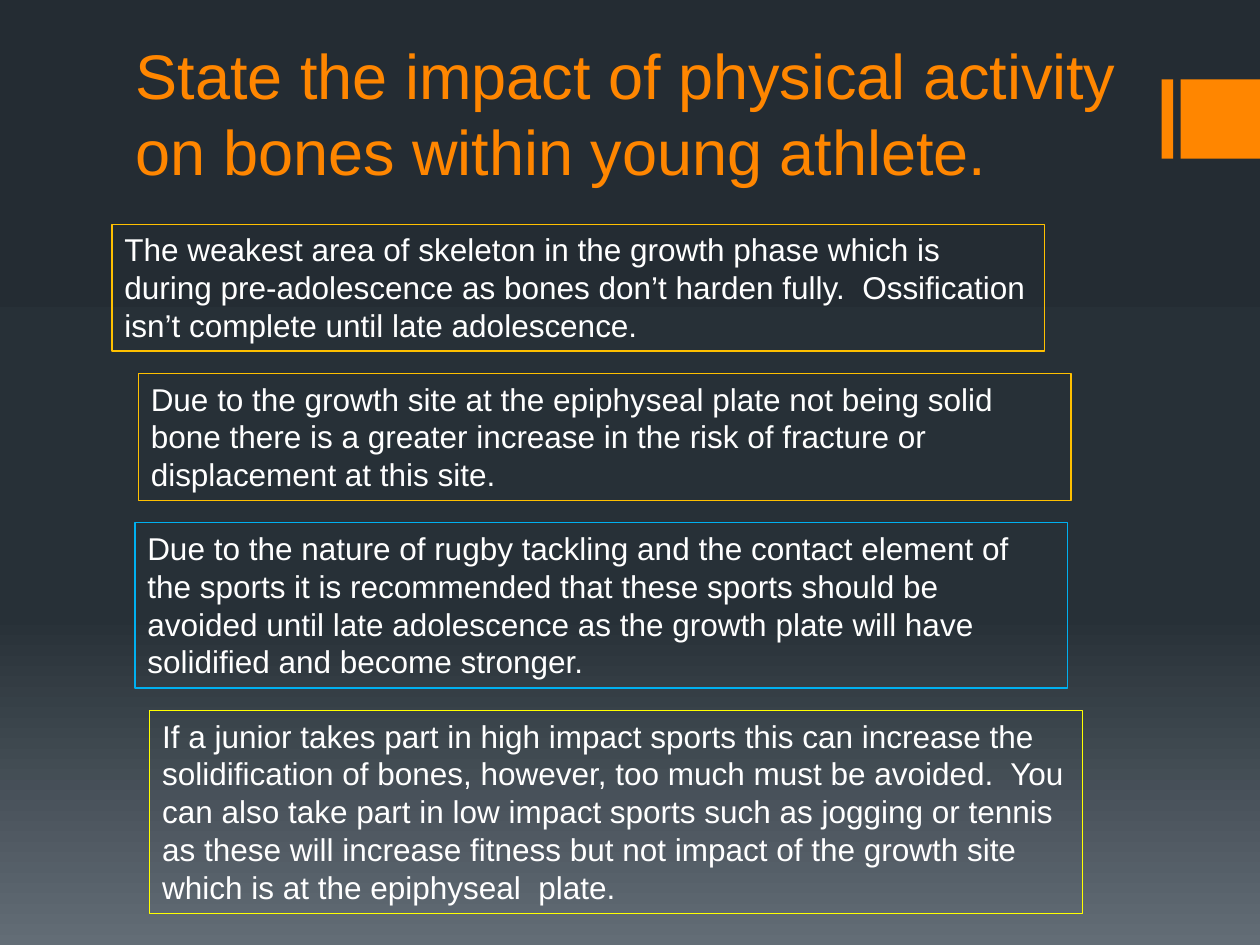
"""Build a slide on how physical activity affects the bones of young athletes."""
import copy
from dataclasses import dataclass

import pptx
import pptx.dml.color
import pptx.enum.shapes
import pptx.enum.text
import pptx.oxml.ns
import pptx.shapes.autoshape
import pptx.slide
import pptx.text.text
import pptx.util

Cm = pptx.util.Cm
FONT = "Arial"
ORANGE = "FF8600"
WHITE = "FFFFFF"
BACKGROUND_STOPS = [(0, "242C33"), (0.65, "273037"), (1, "636D76")]
TITLE = "State the impact of physical activity on bones within young athlete."
ACCENT_TOP, ACCENT_HEIGHT = 1.6, 1.6
ACCENT_BARS = [(23.42, 0.23), (23.8, 1.6)]
FIRST_TOP, POINT_GAP, POINT_WIDTH = 4.52, 0.45, 18.8
LINE_HEIGHT, PADDING = 0.77, 0.25


@dataclass
class Point:
    """An outlined statement; its left edge is in centimetres."""
    left: float
    lines: int
    border: str
    wording: str

    @property
    def height(self) -> float:
        """Return the height that holds all lines."""
        return self.lines * LINE_HEIGHT + PADDING


POINTS = [
    Point(2.26, 3, "FFC000",
          "The weakest area of skeleton in the growth phase which is during "
          "pre-adolescence as bones don’t harden fully.  Ossification isn’t "
          "complete until late adolescence."),
    Point(2.79, 3, "FFC000",
          "Due to the growth site at the epiphyseal plate not being solid bone "
          "there is a greater increase in the risk of fracture or displacement "
          "at this site."),
    Point(2.72, 4, "00B0F0",
          "Due to the nature of rugby tackling and the contact element of the "
          "sports it is recommended that these sports should be avoided until "
          "late adolescence as the growth plate will have solidified and become "
          "stronger."),
    Point(3.02, 5, "FFFF00",
          "If a junior takes part in high impact sports this can increase the "
          "solidification of bones, however, too much must be avoided.  You can "
          "also take part in low impact sports such as jogging or tennis as "
          "these will increase fitness but not impact of the growth site which "
          "is at the epiphyseal  plate."),
]


def color(code: str) -> pptx.dml.color.RGBColor:
    """Turn a hex string into a colour."""
    return pptx.dml.color.RGBColor.from_string(code)


def paint_background(slide: pptx.slide.Slide) -> None:
    """Fill the background with a gradient from top to bottom."""
    fill = slide.background.fill
    fill.gradient()
    fill.gradient_angle = 270
    stop_list = slide.element.find(".//" + pptx.oxml.ns.qn("a:gsLst"))
    stop_list.insert(1, copy.deepcopy(stop_list[0]))
    for stop, (position, code) in zip(fill.gradient_stops, BACKGROUND_STOPS):
        stop.position = position
        stop.color.rgb = color(code)


def write(frame: pptx.text.text.TextFrame, wording: str, size: int, code: str) -> None:
    """Write one left-aligned, wrapped paragraph."""
    frame.word_wrap = True
    paragraph = frame.paragraphs[0]
    paragraph.alignment = pptx.enum.text.PP_ALIGN.LEFT
    run = paragraph.add_run()
    run.text = wording
    run.font.name = FONT
    run.font.size = pptx.util.Pt(size)
    run.font.color.rgb = color(code)


def add_rectangle(slide: pptx.slide.Slide, left: float, top: float, width: float,
                  height: float) -> pptx.shapes.autoshape.Shape:
    """Add a rectangle without shadow, measured in centimetres."""
    rectangle = slide.shapes.add_shape(
        pptx.enum.shapes.MSO_SHAPE.RECTANGLE, Cm(left), Cm(top), Cm(width), Cm(height))
    rectangle.shadow.inherit = False
    return rectangle


def add_accent(slide: pptx.slide.Slide, left: float, width: float) -> None:
    """Add a solid bar at the right edge."""
    bar = add_rectangle(slide, left, ACCENT_TOP, width, ACCENT_HEIGHT)
    bar.fill.solid()
    bar.fill.fore_color.rgb = color(ORANGE)
    bar.line.fill.background()


def add_title(slide: pptx.slide.Slide) -> None:
    """Add the heading, resting on the bottom of its box."""
    heading = slide.shapes.add_textbox(Cm(2.49), Cm(0.6), Cm(20.32), Cm(3.31))
    heading.text_frame.vertical_anchor = pptx.enum.text.MSO_ANCHOR.BOTTOM
    write(heading.text_frame, TITLE, 36, ORANGE)


def add_point(slide: pptx.slide.Slide, point: Point, top: float) -> None:
    """Add one outlined statement."""
    box = add_rectangle(slide, point.left, top, POINT_WIDTH, point.height)
    box.fill.background()
    box.line.color.rgb = color(point.border)
    box.line.width = pptx.util.Pt(0.75)
    box.text_frame.vertical_anchor = pptx.enum.text.MSO_ANCHOR.TOP
    box.text_frame.auto_size = pptx.enum.text.MSO_AUTO_SIZE.SHAPE_TO_FIT_TEXT
    write(box.text_frame, point.wording, 18, WHITE)


def main() -> None:
    """Assemble and save the slide."""
    deck = pptx.Presentation()
    deck.slide_width, deck.slide_height = Cm(25.4), Cm(19.05)
    slide = deck.slides.add_slide(deck.slide_layouts[6])
    paint_background(slide)
    for left, width in ACCENT_BARS:
        add_accent(slide, left, width)
    add_title(slide)
    top = FIRST_TOP
    for point in POINTS:
        add_point(slide, point, top)
        top += point.height + POINT_GAP
    deck.save("out.pptx")


if __name__ == "__main__":
    main()
